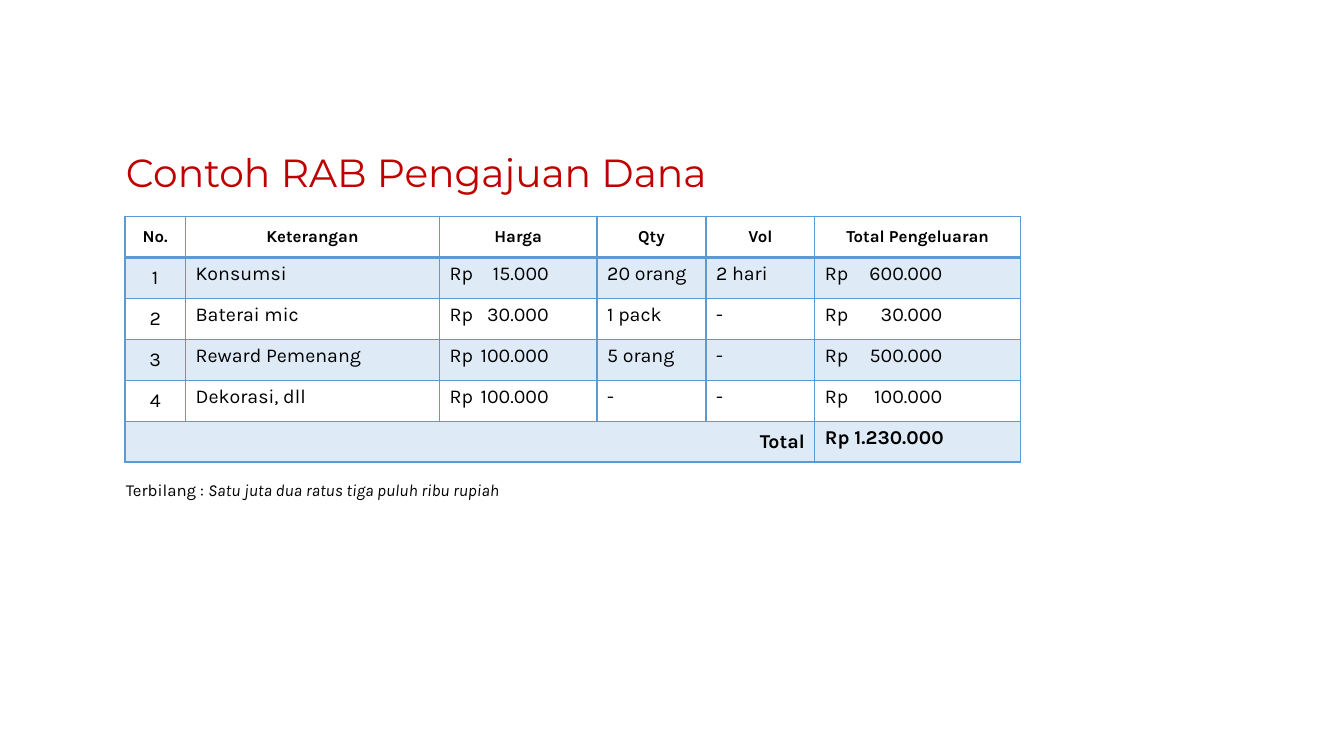
from lxml import etree
from pptx import Presentation
from pptx.dml.color import RGBColor
from pptx.enum.text import MSO_ANCHOR as ANCHOR, MSO_AUTO_SIZE as AUTO, PP_ALIGN as ALIGN
from pptx.oxml.ns import qn
from pptx.util import Pt

COLORS = {"title": "C00000", "text": "000000", "blue": "5B9BD5"}
HEADERS = ["No.", "Keterangan", "Harga", "Qty", "Vol", "Total Pengeluaran"]
ITEMS = [
    ["1", "Konsumsi", "Rp\t15.000", "20 orang", "2 hari", "Rp\t600.000"],
    ["2", "Baterai mic", "Rp\t30.000", "1 pack", "-", "Rp\t30.000"],
    ["3", "Reward Pemenang", "Rp\t100.000", "5 orang", "-", "Rp\t500.000"],
    ["4", "Dekorasi, dll", "Rp\t100.000", "-", "-", "Rp\t100.000"],
]
TOTAL = ["Total", "", "", "", "", "Rp 1.230.000"]
COL_WIDTHS = [43.2, 181.4, 112.6, 77.8, 77.8, 147]
AMOUNT_TABS = {2: 71, 5: 84}  # column: right tab stop
ROW_HEIGHT = 29.2


def add_run(p, text, size=14, font="Karla", color="text", bold=False, italic=False):
    r = p.add_run()
    r.text = text
    r.font.size, r.font.name = Pt(size), font
    r.font.bold, r.font.italic = bold, italic
    r.font.color.rgb = RGBColor.from_string(COLORS[color])


def place(sp, left, top, width, height):
    sp.left, sp.top, sp.width, sp.height = Pt(left), Pt(top), Pt(width), Pt(height)


def set_frame(tf):
    tf.word_wrap = True
    tf.auto_size = AUTO.NONE
    tf.vertical_anchor = ANCHOR.MIDDLE
    tf.margin_left = tf.margin_right = Pt(7.2)
    tf.margin_top = tf.margin_bottom = Pt(3.6)


def add_title(slide, left, top, width, height):
    sp = slide.shapes.title
    place(sp, left, top, width, height)
    set_frame(sp.text_frame)
    p = sp.text_frame.paragraphs[0]
    p.alignment, p.line_spacing = ALIGN.LEFT, 0.9
    add_run(p, "Contoh RAB Pengajuan Dana", size=28, font="Montserrat", color="title")


def set_borders(cell, **widths):
    tc_pr = cell._tc.get_or_add_tcPr()
    for i, side in enumerate("LRTB"):
        ln = etree.Element(qn(f"a:ln{side}"), w=str(Pt(widths.get(side, 1))))
        fill = etree.SubElement(ln, qn("a:solidFill"))
        etree.SubElement(fill, qn("a:srgbClr"), val=COLORS["blue"])
        tc_pr.insert(i, ln)


def set_fill(cell, shaded):
    if not shaded:
        cell.fill.background()
        return
    cell.fill.solid()
    cell.fill.fore_color.rgb = RGBColor.from_string(COLORS["blue"])
    color = cell._tc.tcPr.find(".//" + qn("a:solidFill") + "/" + qn("a:srgbClr"))
    etree.SubElement(color, qn("a:alpha"), val="20000")


def add_tab(p, position):
    tabs = etree.SubElement(p._p.get_or_add_pPr(), qn("a:tabLst"))
    etree.SubElement(tabs, qn("a:tab"), pos=str(Pt(position)), algn="r")


def add_budget_table(slide, left, top):
    rows = [HEADERS, *ITEMS, TOTAL]
    last = len(rows) - 1
    table = slide.shapes.add_table(
        len(rows), len(HEADERS), Pt(left), Pt(top),
        Pt(sum(COL_WIDTHS)), Pt(ROW_HEIGHT * len(rows))).table
    table.first_row = table.horz_banding = False
    for column, width in zip(table.columns, COL_WIDTHS):
        column.width = Pt(width)
    for i, row in enumerate(rows):
        table.rows[i].height = Pt(ROW_HEIGHT)
        for j, text in enumerate(row):
            cell = table.cell(i, j)
            set_fill(cell, shaded=i % 2 == 1)
            set_borders(cell, T=2 if i == 1 else 1, B=2 if i == 0 else 1)
            cell.vertical_anchor = ANCHOR.MIDDLE if i == 0 or j == 0 else ANCHOR.TOP
            if not text:
                continue
            p = cell.text_frame.paragraphs[0]
            if "\t" in text:
                add_tab(p, AMOUNT_TABS[j])
            if i == last and j == 0:
                p.alignment = ALIGN.RIGHT
            elif i == 0 or j == 0:
                p.alignment = ALIGN.CENTER
            add_run(p, text, size=12 if i == 0 else 14, bold=i in (0, last))
    table.cell(last, 0).merge(table.cell(last, 4))


def add_amount_in_words(slide, left, top, width, height):
    sp = slide.shapes.add_textbox(Pt(left), Pt(top), Pt(width), Pt(height))
    set_frame(sp.text_frame)
    p = sp.text_frame.paragraphs[0]
    p.line_spacing = 1.5
    add_run(p, "Terbilang : ", size=12)
    add_run(p, "Satu juta dua ratus tiga puluh ribu rupiah", size=12, italic=True)


def build_budget_slide(prs, left, top):
    slide = prs.slides.add_slide(prs.slide_layouts[5])
    add_title(slide, left, top, 482.4, 82)
    add_budget_table(slide, left + 6.5, top + 70.6)
    add_amount_in_words(slide, left, top + 245.6, 423.4, 32.4)


def main():
    prs = Presentation()
    prs.slide_width, prs.slide_height = Pt(960), Pt(540)
    build_budget_slide(prs, left=82.8, top=84.2)
    prs.save("out.pptx")


if __name__ == "__main__":
    main()
